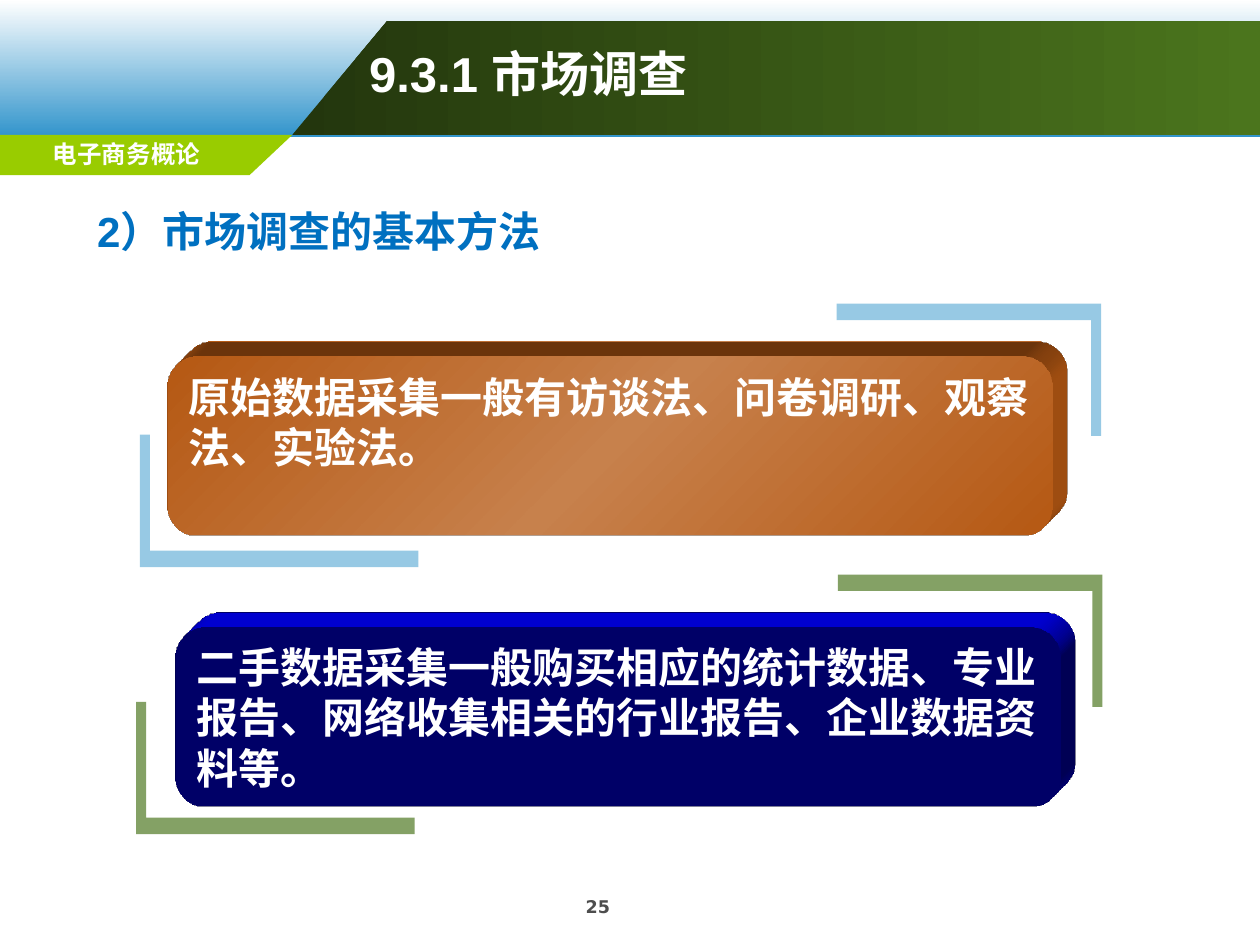
from dataclasses import dataclass

from lxml import etree
from pptx import Presentation
from pptx import util as u
from pptx.dml.color import RGBColor
from pptx.enum import shapes, text
from pptx.oxml.ns import qn

WHITE = RGBColor(0xFF, 0xFF, 0xFF)
SKY = RGBColor(0x31, 0x94, 0xCB)
DARK_GREEN = RGBColor(0x23, 0x36, 0x0D)
GREEN = RGBColor(0x4B, 0x75, 0x1D)
LIME = RGBColor(0x99, 0xCC, 0x00)
GRAY = RGBColor(0x4D, 0x4D, 0x4D)
BROWN = RGBColor(0xB5, 0x58, 0x13)
LIGHT_BROWN = RGBColor(0xC7, 0x81, 0x4C)
BLUE = RGBColor(0x00, 0x00, 0xFF)
HEADING_BLUE = RGBColor(0x00, 0x70, 0xC0)


@dataclass
class Bracket:
    """An L-shaped corner; arms start at the corner and may run negative."""
    x: float
    y: float
    width: float
    height: float


@dataclass
class Panel:
    left: float
    top: float
    colors: list[RGBColor]
    light: tuple[str, str]
    lines: list[str]
    anchor: text.MSO_ANCHOR
    brackets: list[Bracket]
    bracket_color: RGBColor
    bracket_opacity: int


PANELS = [
    Panel(1.33, 2.83, [BROWN, LIGHT_BROWN, BROWN], ("legacyFlat3", "b"),
          ["原始数据采集一般有访谈法、问卷调研、观察", "法、实验法。"],
          text.MSO_ANCHOR.TOP,
          [Bracket(1.11, 4.5, 2.21, -1.05), Bracket(8.74, 2.41, -2.1, 1.05)],
          SKY, 50),
    Panel(1.39, 4.98, [BLUE], ("legacyNormal3", "r"),
          ["二手数据采集一般购买相应的统计数据、专业",
           "报告、网络收集相关的行业报告、企业数据资", "料等。"],
          text.MSO_ANCHOR.MIDDLE,
          [Bracket(1.08, 6.62, 2.21, -1.05), Bracket(8.75, 4.56, -2.1, 1.05)],
          GREEN, 68),
]


def paint(shape, colors: list[RGBColor], angle: int = 0) -> None:
    """Fill with one colour, or with evenly spaced gradient stops."""
    shape.shadow.inherit = False
    shape.line.fill.background()
    if len(colors) == 1:
        shape.fill.solid()
        shape.fill.fore_color.rgb = colors[0]
        return
    shape.fill.gradient()
    shape.fill.gradient_angle = (360 - angle) % 360
    stops = shape._element.spPr.find(".//" + qn("a:gsLst"))
    stops.clear()
    for index, color in enumerate(colors):
        position = 100000 * index // (len(colors) - 1)
        stop = etree.SubElement(stops, qn("a:gs"), pos=str(position))
        etree.SubElement(stop, qn("a:srgbClr"), val=str(color))


def add_outline(page, points: list[tuple[float, float]], colors: list[RGBColor]):
    corners = [(u.Inches(x), u.Inches(y)) for x, y in points]
    builder = page.shapes.build_freeform(*corners[0])
    builder.add_line_segments(corners[1:], close=True)
    outline = builder.convert_to_shape()
    paint(outline, colors)
    return outline


def place(shape, left: float, top: float, width: float, height: float) -> None:
    shape.left, shape.top = u.Inches(left), u.Inches(top)
    shape.width, shape.height = u.Inches(width), u.Inches(height)


def write(shape, lines: list[str], size: int, color: RGBColor, font: str = "Arial",
          align=text.PP_ALIGN.LEFT, anchor=text.MSO_ANCHOR.TOP,
          wrap: bool = True) -> None:
    frame = shape.text_frame
    frame.text = "\n".join(lines)
    frame.word_wrap = wrap
    frame.auto_size = text.MSO_AUTO_SIZE.NONE
    frame.vertical_anchor = anchor
    for para in frame.paragraphs:
        para.alignment = align
        para.space_before = u.Pt(0)
        for span in para.runs:
            span.font.name = font
            span.font.size = u.Pt(size)
            span.font.bold = True
            span.font.color.rgb = color
            east_asian = etree.SubElement(span.font._element, qn("a:ea"))
            east_asian.set("typeface", font)


def add_label(page, words: str, box: tuple[float, float, float, float],
              size: int, color: RGBColor) -> None:
    label = page.shapes.add_textbox(*(u.Inches(value) for value in box))
    write(label, [words], size, color, "DejaVu Sans", text.PP_ALIGN.CENTER)


def add_bracket(page, bracket: Bracket, color: RGBColor, opacity: int) -> None:
    x, y = bracket.x, bracket.y
    end_x, end_y = x + bracket.width, y + bracket.height
    inner_x = x + (0.08 if bracket.width > 0 else -0.08)
    inner_y = y + (0.13 if bracket.height > 0 else -0.13)
    outline = add_outline(page, [(x, y), (end_x, y), (end_x, inner_y),
                                 (inner_x, inner_y), (inner_x, end_y), (x, end_y)],
                          [color])
    tint = outline._element.spPr.find(".//" + qn("a:srgbClr"))
    etree.SubElement(tint, qn("a:alpha"), val=str(opacity * 1000))


def extrude(shape, color: RGBColor, light: tuple[str, str]) -> None:
    """Give the shape depth towards the upper right."""
    properties = shape._element.spPr
    scene = etree.SubElement(properties, qn("a:scene3d"))
    etree.SubElement(scene, qn("a:camera"), prst="legacyObliqueTopRight")
    etree.SubElement(scene, qn("a:lightRig"), rig=light[0], dir=light[1])
    solid = etree.SubElement(properties, qn("a:sp3d"), prstMaterial="legacyMatte",
                             extrusionH=str(u.Inches(0.33)))
    side = etree.SubElement(solid, qn("a:extrusionClr"))
    etree.SubElement(side, qn("a:srgbClr"), val=str(color))


def add_panel(page, panel: Panel) -> None:
    for bracket in panel.brackets:
        add_bracket(page, bracket, panel.bracket_color, panel.bracket_opacity)
    box = page.shapes.add_shape(shapes.MSO_SHAPE.ROUNDED_RECTANGLE,
                                u.Inches(panel.left), u.Inches(panel.top),
                                u.Inches(7.03), u.Inches(1.42))
    paint(box, panel.colors, 45)
    extrude(box, panel.colors[0], panel.light)
    write(box, panel.lines, 24, WHITE, anchor=panel.anchor, wrap=False)


def main() -> None:
    deck = Presentation()
    deck.slide_width, deck.slide_height = u.Inches(10), u.Inches(7.5)
    page = deck.slides.add_slide(deck.slide_layouts[1])
    title, body = page.shapes.title, page.placeholders[1]

    # Banner and course tab
    sky = page.shapes.add_shape(shapes.MSO_SHAPE.RECTANGLE, 0, 0,
                                u.Inches(10), u.Inches(1.09))
    paint(sky, [WHITE, SKY], 90)
    add_outline(page, [(2.32, 1.07), (10, 1.07), (10, 0.17), (3.07, 0.17)],
                [DARK_GREEN, GREEN])
    add_outline(page, [(0, 1.07), (2.32, 1.07), (1.98, 1.39), (0, 1.39)], [LIME])
    add_label(page, "电子商务概论", (0.04, 1.05, 1.93, 0.31), 14, WHITE)

    # Title, brought in front of the banner
    page.shapes._spTree.append(title._element)
    place(title, 2.83, 0.25, 6.89, 0.66)
    write(title, ["9.3.1 市场调查"], 28, WHITE, anchor=text.MSO_ANCHOR.MIDDLE)

    # Heading
    place(body, 0.67, 1.58, 7.92, 0.58)
    body.text_frame.text = "2）市场调查的基本方法"
    write(body, [body.text_frame.text], 24, HEADING_BLUE)
    layout = body.text_frame.paragraphs[0]._p.get_or_add_pPr()
    layout.set("marL", str(u.Inches(0.38)))
    layout.set("indent", str(u.Inches(-0.38)))
    etree.SubElement(layout, qn("a:buNone"))

    # Method panels
    for panel in PANELS:
        add_panel(page, panel)

    # Page number
    add_label(page, "25", (3.58, 7.06, 2.33, 0.33), 10, GRAY)
    deck.save("out.pptx")


if __name__ == "__main__":
    main()
